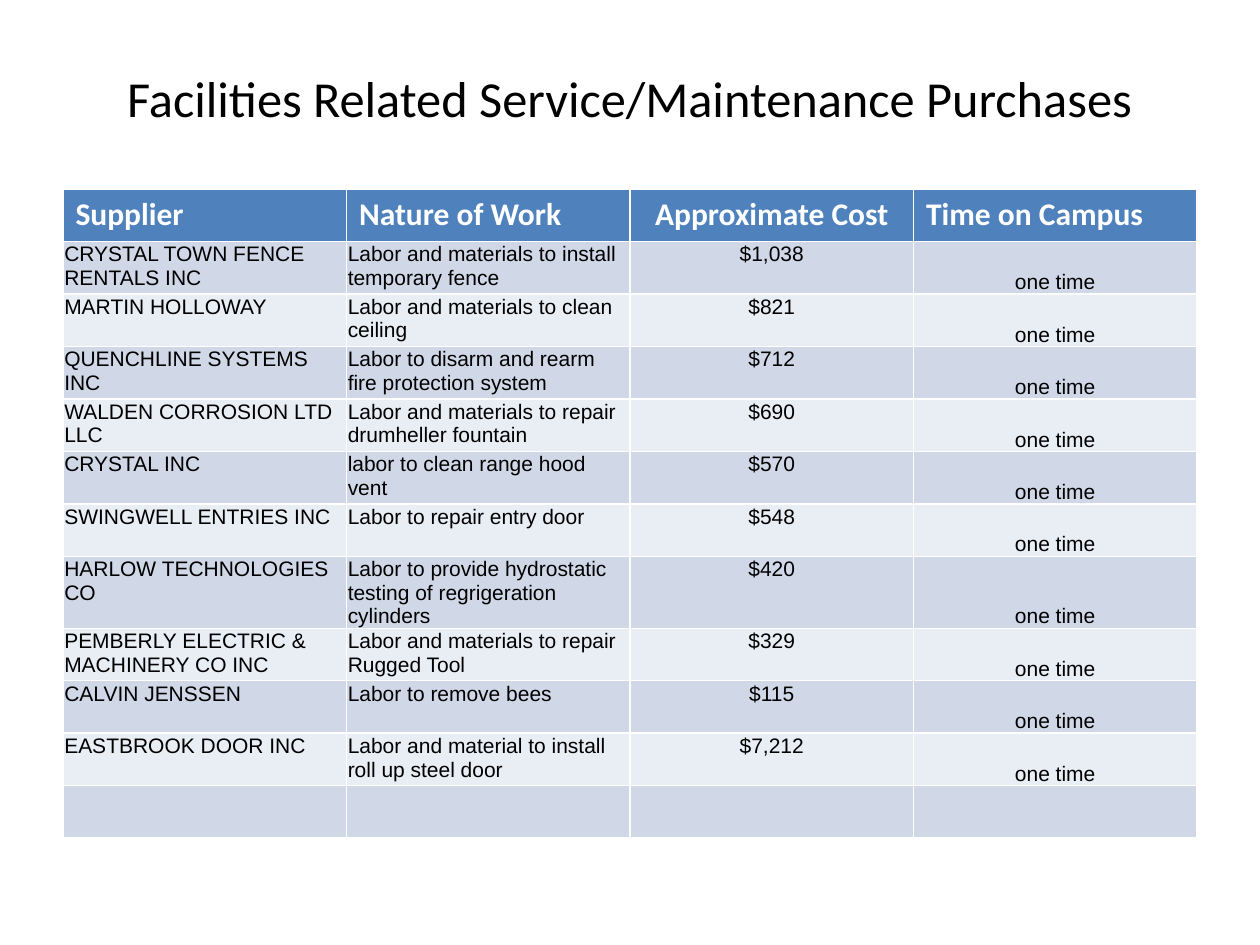
from pptx import Presentation
from pptx.dml.color import RGBColor
from pptx.enum.text import MSO_ANCHOR, PP_ALIGN
from pptx.util import Pt

HEADS = ["Supplier", "Nature of Work", "Approximate Cost", "Time on Campus"]
JOBS = [
    ("CRYSTAL TOWN FENCE RENTALS INC",
     "Labor and materials to install temporary fence", "$1,038"),
    ("MARTIN HOLLOWAY", "Labor and materials to clean ceiling", "$821"),
    ("QUENCHLINE SYSTEMS INC",
     "Labor to disarm and rearm fire protection system", "$712"),
    ("WALDEN CORROSION LTD LLC",
     "Labor and materials to repair drumheller fountain", "$690"),
    ("CRYSTAL INC", "labor to clean range hood vent", "$570"),
    ("SWINGWELL ENTRIES INC", "Labor to repair entry door", "$548"),
    ("HARLOW TECHNOLOGIES CO",
     "Labor to provide hydrostatic testing of regrigeration cylinders",
     "$420"),
    ("PEMBERLY ELECTRIC & MACHINERY CO INC",
     "Labor and materials to repair Rugged Tool", "$329"),
    ("CALVIN JENSSEN", "Labor to remove bees", "$115"),
    ("EASTBROOK DOOR INC",
     "Labor and material to install roll up steel door", "$7,212"),
]
TERM = "one time"
BANDS = ["D0D8E8", "E9EDF4"]


def paint(fill, code):
    fill.solid()
    fill.fore_color.rgb = RGBColor.from_string(code)


def style(para, face, size, code, bold=False, align=PP_ALIGN.LEFT):
    font = para.font
    font.name, font.size, font.bold = face, Pt(size), bold
    font.color.rgb = RGBColor.from_string(code)
    para.alignment = align


def add_title(slide, left, top, width, height):
    title = slide.shapes.title
    title.left, title.top = Pt(left), Pt(top)
    title.width, title.height = Pt(width), Pt(height)
    frame = title.text_frame
    frame.text = "Facilities Related Service/Maintenance Purchases"
    frame.vertical_anchor = MSO_ANCHOR.MIDDLE
    style(frame.paragraphs[0], "Calibri", 28.8, "000000",
          align=PP_ALIGN.CENTER)


def fill_head(cell, col):
    cell.text = HEADS[col]
    paint(cell.fill, "4F81BD")
    align = PP_ALIGN.CENTER if col == 2 else PP_ALIGN.LEFT
    style(cell.text_frame.paragraphs[0], "Calibri", 18, "FFFFFF", True, align)


def fill_job(cell, col, text):
    cell.text = text
    cell.margin_left = cell.margin_right = cell.margin_top = Pt(0.75)
    cell.margin_bottom = Pt(0)
    if col == 3:
        cell.vertical_anchor = MSO_ANCHOR.BOTTOM
    align = PP_ALIGN.CENTER if col >= 2 else PP_ALIGN.LEFT
    style(cell.text_frame.paragraphs[0], "Arial", 12, "000000", align=align)


def add_costs(slide, left, top, width, row_height):
    """Header, one row for each job, and a blank closing row."""
    count = len(JOBS) + 2
    table = slide.shapes.add_table(
        count, len(HEADS), Pt(left), Pt(top), Pt(width),
        Pt(row_height * count)).table
    for row in table.rows:
        row.height = Pt(row_height)
    for col in range(len(HEADS)):
        fill_head(table.cell(0, col), col)
    for num in range(1, count):
        for col in range(len(HEADS)):
            paint(table.cell(num, col).fill, BANDS[(num - 1) % 2])
    for num, job in enumerate(JOBS, 1):
        for col, text in enumerate((*job, TERM)):
            fill_job(table.cell(num, col), col, text)


def main():
    deck = Presentation()
    deck.slide_width, deck.slide_height = Pt(720), Pt(540)
    slide = deck.slides.add_slide(deck.slide_layouts[5])
    add_title(slide, 36, 21.6, 648, 68.4)
    add_costs(slide, 36, 108, 648, 30)
    deck.save("out.pptx")


if __name__ == "__main__":
    main()
